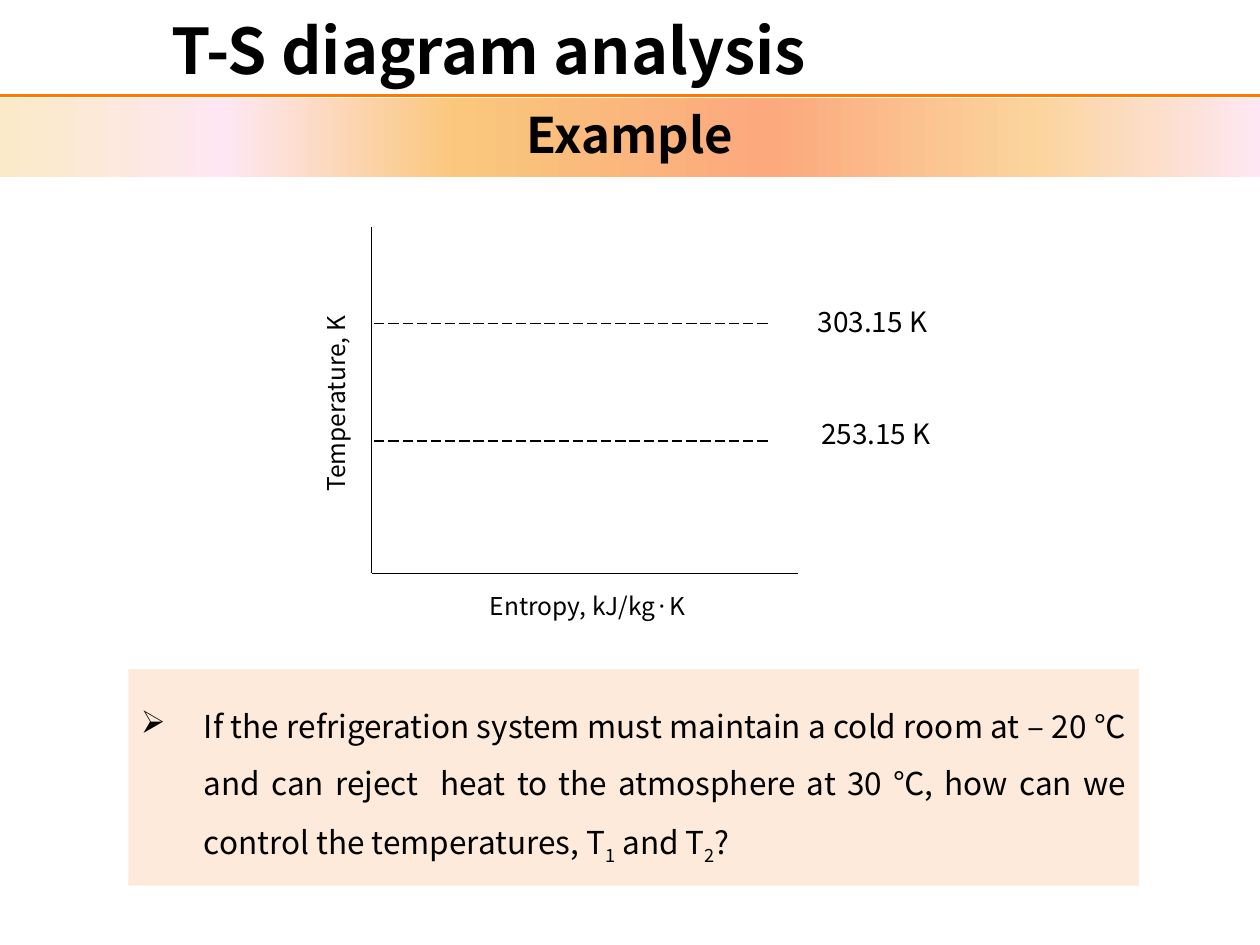
from dataclasses import dataclass

from pptx import Presentation
from pptx.dml.color import RGBColor
from pptx.enum.dml import MSO_LINE_DASH_STYLE as Dash
from pptx.enum.shapes import MSO_CONNECTOR as Connector, MSO_SHAPE as Preset
from pptx.enum.text import MSO_ANCHOR as Anchor, PP_ALIGN as Align
from pptx.oxml.ns import qn
from pptx.oxml.xmlchemy import OxmlElement
from pptx.util import Pt


@dataclass(frozen=True)
class Theme:
    """Fonts, colours and type sizes of the slide."""
    font: str = "Noto Sans CJK KR"
    ink: str = "000000"
    rule: str = "FF7800"
    panel: str = "FDEADA"
    band: tuple = ((0, "FBEAC7"), (18, "FEE7F2"), (36, "FAC77D"),
                   (61, "FBA97D"), (82, "FBD49C"), (100, "FEE7F2"))
    title_size: int = 36
    heading_size: int = 28
    body_size: int = 18
    level_size: int = 16
    axis_size: int = 14


THEME = Theme()


def add_child(parent, tag, **attributes):
    """Append an XML element with attributes and return it."""
    child = OxmlElement(tag)
    for key, value in attributes.items():
        child.set(key, str(value))
    parent.append(child)
    return child


def write(shape, *runs, size, bold=False, align=Align.LEFT, anchor=Anchor.TOP,
          spacing=None, bullet=None, indent=0, direction=None):
    """Write one paragraph; a run given as a tuple holds text and baseline."""
    frame = shape.text_frame
    frame.word_wrap = True
    frame.vertical_anchor = anchor
    if direction:
        frame._txBody.bodyPr.set("vert", direction)
    paragraph = frame.paragraphs[0]
    paragraph.alignment = align
    if bullet:
        properties = paragraph._p.get_or_add_pPr()
        properties.set("marL", str(Pt(indent)))
        properties.set("indent", str(-Pt(indent)))
        add_child(properties, "a:buChar", char=bullet)
    if spacing:
        paragraph.line_spacing = spacing
    for part in runs:
        text, baseline = part if isinstance(part, tuple) else (part, 0)
        run = paragraph.add_run()
        run.text = text
        run.font.size = Pt(size)
        run.font.bold = bold
        run.font.color.rgb = RGBColor.from_string(THEME.ink)
        run.font.name = THEME.font
        style = run._r.get_or_add_rPr()
        add_child(style, "a:ea", typeface=THEME.font)
        if baseline:
            style.set("baseline", str(baseline * 1000))


def add_label(slide, left, top, width, height, text, **text_format):
    """Add a text box holding one label."""
    label = slide.shapes.add_textbox(Pt(left), Pt(top), Pt(width), Pt(height))
    write(label, text, **text_format)


def add_line(slide, x1, y1, x2, y2, color=THEME.ink, width=0.75, dash=None):
    """Add a straight line without a shadow."""
    line = slide.shapes.add_connector(Connector.STRAIGHT, Pt(x1), Pt(y1), Pt(x2), Pt(y2))
    line.line.color.rgb = RGBColor.from_string(color)
    line.line.width = Pt(width)
    if dash:
        line.line.dash_style = dash
    add_child(line._element.spPr, "a:effectLst")


def add_panel(slide, left, top, width, height):
    """Add a rectangle without outline or shadow."""
    panel = slide.shapes.add_shape(Preset.RECTANGLE, Pt(left), Pt(top), Pt(width), Pt(height))
    panel.shadow.inherit = False
    panel.line.fill.background()
    return panel


def fill_gradient(shape, stops):
    """Fill a shape with a left-to-right gradient of several stops."""
    shape.fill.gradient()
    shape.fill.gradient_angle = 0
    stop_list = shape._element.spPr.find(qn("a:gradFill")).find(qn("a:gsLst"))
    for stop in list(stop_list):
        stop_list.remove(stop)
    for position, color in stops:
        stop = add_child(stop_list, "a:gs", pos=position * 1000)
        add_child(stop, "a:srgbClr", val=color)


def add_header(slide):
    """Place the title, the rule below it and the gradient heading band."""
    add_line(slide, 0, 54.7, 720, 54.7, color=THEME.rule, width=2)
    title = slide.shapes.title
    title.left, title.top, title.width, title.height = Pt(0), Pt(0), Pt(558.7), Pt(56.9)
    write(title, "T-S diagram analysis", size=THEME.title_size, bold=True,
          align=Align.CENTER, anchor=Anchor.MIDDLE)
    band = add_panel(slide, 0, 56.2, 720, 45.2)
    fill_gradient(band, THEME.band)
    write(band, "Example", size=THEME.heading_size, bold=True, align=Align.CENTER)


def add_diagram(slide):
    """Draw the temperature-entropy axes and the two temperature levels."""
    origin_x, origin_y = 212.4, 327.6
    add_line(slide, origin_x, 129.6, origin_x, origin_y)
    add_line(slide, origin_x, origin_y, 455.8, origin_y)
    add_label(slide, 180, 157.7, 31, 130.3, "Temperature, K",
              size=THEME.axis_size, direction="vert270")
    add_label(slide, 272.9, 334.1, 129.6, 24.5, "Entropy, kJ/kg·K", size=THEME.axis_size)
    levels = (("303.15 K", 185, 460.1, 170.6), ("253.15 K", 252, 462.2, 234.7))
    for text, level_y, left, top in levels:
        add_line(slide, 213.8, level_y, 440.6, level_y, dash=Dash.LONG_DASH)
        add_label(slide, left, top, 109.4, 26.6, text, size=THEME.level_size)


def add_question(slide):
    """Add the question panel."""
    panel = add_panel(slide, 73.4, 382.3, 577.4, 123.8)
    panel.fill.solid()
    panel.fill.fore_color.rgb = RGBColor.from_string(THEME.panel)
    write(panel,
          "If the refrigeration system must maintain a cold room at – 20 ℃ and can reject"
          "  heat to the atmosphere at 30 ℃, how can we control the temperatures, T",
          ("1", -25), " and T", ("2", -25), "?",
          size=THEME.body_size, align=Align.JUSTIFY, anchor=Anchor.MIDDLE,
          spacing=1.5, bullet="➢", indent=36)


def main():
    """Build the slide and save it."""
    deck = Presentation()
    deck.slide_width, deck.slide_height = Pt(720), Pt(540)
    slide = deck.slides.add_slide(deck.slide_layouts.get_by_name("Title Only"))
    add_header(slide)
    add_diagram(slide)
    add_question(slide)
    deck.save("out.pptx")


if __name__ == "__main__":
    main()
